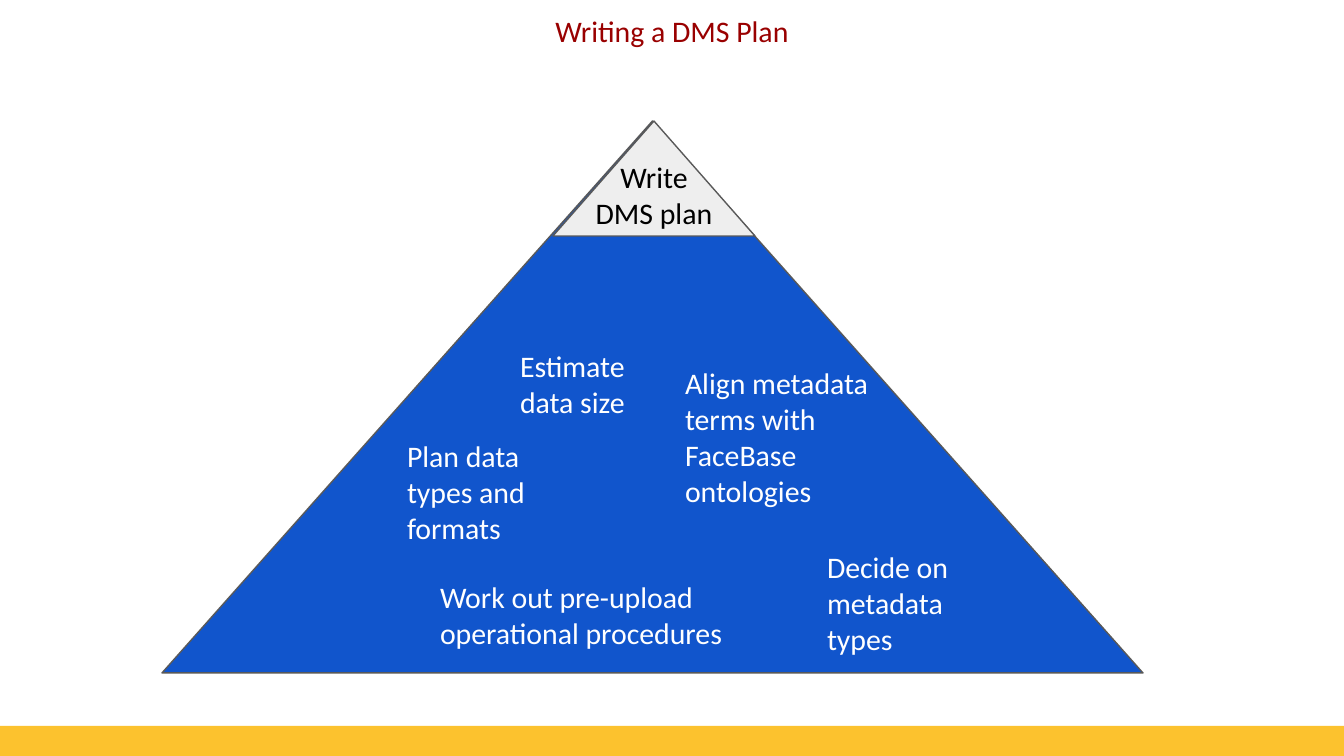
from pptx import Presentation
from pptx.dml.color import RGBColor
from pptx.enum.shapes import MSO_SHAPE as Shape
from pptx.enum.text import MSO_ANCHOR as Anchor, MSO_AUTO_SIZE as AutoSize, PP_ALIGN as Align
from pptx.util import Emu, Pt

WHITE = RGBColor(0xFF, 0xFF, 0xFF)
BLACK = RGBColor(0x00, 0x00, 0x00)
RED = RGBColor(0x99, 0x00, 0x00)
BLUE = RGBColor(0x11, 0x55, 0xCC)
GOLD = RGBColor(0xFC, 0xC2, 0x2E)
LIGHT_GREY = RGBColor(0xEE, 0xEE, 0xEE)
DARK_GREY = RGBColor(0x59, 0x59, 0x59)

PX = 914400 / 134.4
PAGE_WIDTH, PAGE_HEIGHT = 1344, 756

STEPS = [
    ("Plan data types and formats", 394, 425, 175, 136),
    ("Estimate data size", 507, 335, 175, 99),
    ("Decide on metadata types", 814, 536, 175, 136),
    ("Align metadata terms with FaceBase ontologies", 672, 352, 241, 172),
    ("Work out pre-upload operational procedures", 427, 566, 313, 99),
]


def px(*lengths):
    return [Emu(round(length * PX)) for length in lengths]


class PyramidPage:
    font_name = "Calibri"
    font_size = Pt(16)
    inset = 13

    def __init__(self, deck):
        self.page = deck.slides.add_slide(deck.slide_layouts[5])
        self.page.background.fill.solid()
        self.page.background.fill.fore_color.rgb = WHITE

    def set_text(self, box, text, color, align):
        frame = box.text_frame
        frame.text = text
        frame.word_wrap = True
        frame.vertical_anchor = Anchor.TOP
        inset, = px(self.inset)
        frame.margin_left = frame.margin_right = inset
        frame.margin_top = frame.margin_bottom = inset
        para = frame.paragraphs[0]
        para.alignment = align
        font = para.runs[0].font
        font.name = self.font_name
        font.size = self.font_size
        font.color.rgb = color

    def title(self, text, left, top, width, height):
        box = self.page.shapes.title
        box.left, box.top, box.width, box.height = px(left, top, width, height)
        self.set_text(box, text, RED, Align.CENTER)
        box.text_frame.auto_size = AutoSize.NONE

    def shape(self, kind, left, top, width, height, fill, line=None):
        shape = self.page.shapes.add_shape(kind, *px(left, top, width, height))
        shape.shadow.inherit = False
        shape.fill.solid()
        shape.fill.fore_color.rgb = fill
        if line is None:
            shape.line.fill.background()
        else:
            shape.line.color.rgb = line
            shape.line.width = Pt(0.75)

    def label(self, text, left, top, width, height, color=WHITE, align=Align.LEFT):
        box = self.page.shapes.add_textbox(*px(left, top, width, height))
        self.set_text(box, text, color, align)
        box.text_frame.auto_size = AutoSize.SHAPE_TO_FIT_TEXT


def main():
    deck = Presentation()
    deck.slide_width, deck.slide_height = px(PAGE_WIDTH, PAGE_HEIGHT)
    pyramid = PyramidPage(deck)
    pyramid.title("Writing a DMS Plan", 0, 0, PAGE_WIDTH, 84)
    pyramid.shape(Shape.RECTANGLE, 0, 726, PAGE_WIDTH, 30, GOLD)
    pyramid.shape(Shape.ISOSCELES_TRIANGLE, 162, 121, 981, 552, BLUE, DARK_GREY)
    pyramid.shape(Shape.ISOSCELES_TRIANGLE, 553, 121, 202, 115, LIGHT_GREY, DARK_GREY)
    pyramid.label("Write DMS plan", 581, 146, 146, 99, BLACK, Align.CENTER)
    for step in STEPS:
        pyramid.label(*step)
    deck.save("out.pptx")


if __name__ == "__main__":
    main()
